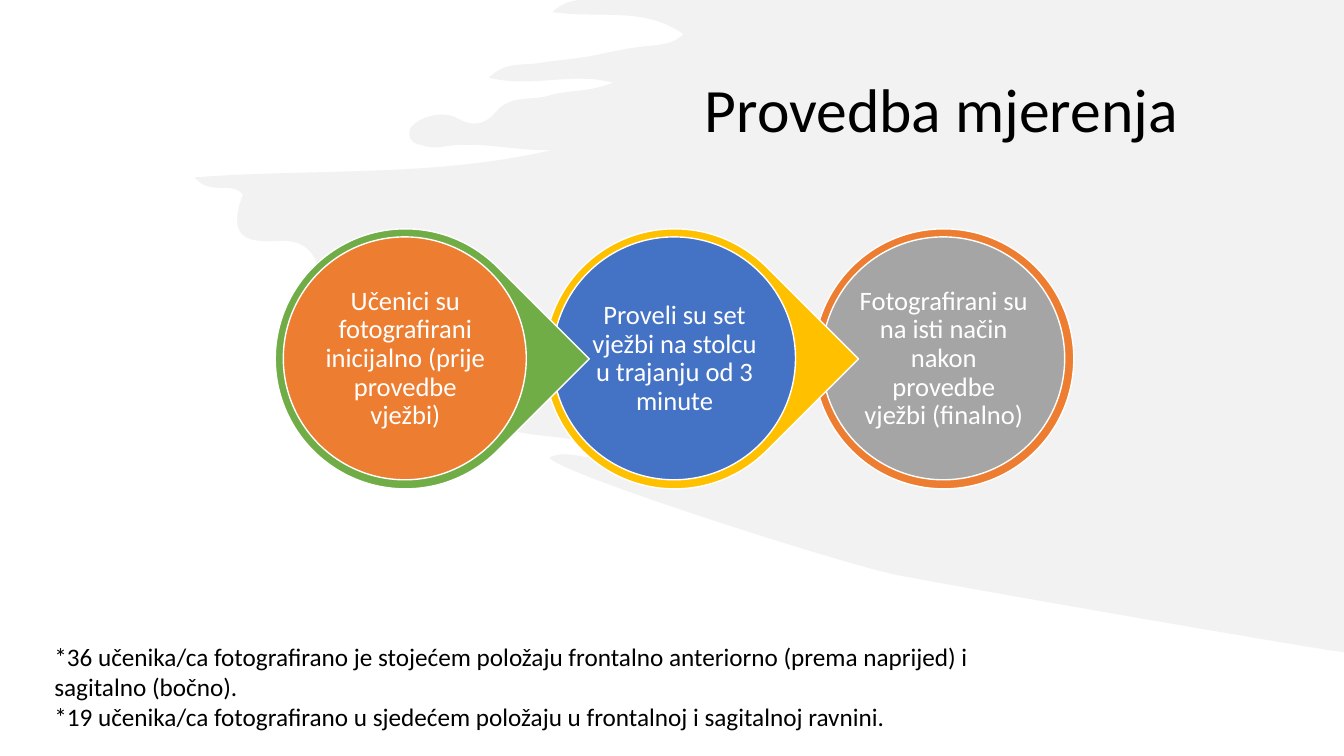
from lxml.etree import SubElement
from pptx import Presentation
from pptx.dml.color import RGBColor
from pptx.enum.shapes import MSO_SHAPE
from pptx.enum.text import MSO_ANCHOR, MSO_AUTO_SIZE, PP_ALIGN
from pptx.oxml.ns import qn
from pptx.util import Pt

PX = 9144  # EMU per px, 100 px to the inch
COLORS = {
    "black": "000000", "white": "FFFFFF", "brush": "E7E6E6",
    "green": "70AD47", "yellow": "FFC000", "orange": "ED7D31",
    "blue": "4472C4", "gray": "A5A5A5",
}


def add_disc(kind, left, top, size, color):
    disc = slide.shapes.add_shape(kind, left * PX, top * PX, size * PX, size * PX)
    disc.shadow.inherit = False
    disc.fill.solid()
    disc.fill.fore_color.rgb = RGBColor.from_string(COLORS[color])
    disc.line.color.rgb = RGBColor.from_string(COLORS["white"])
    disc.line.width = Pt(1)
    return disc


def write(frame, text, size, color, align=PP_ALIGN.LEFT, spacing=0.9):
    frame.text = text
    frame.word_wrap = True
    frame.auto_size = MSO_AUTO_SIZE.NONE
    for paragraph in frame.paragraphs:
        paragraph.alignment = align
        paragraph.line_spacing = spacing
        for run in paragraph.runs:
            run.font.size = Pt(size)
            run.font.name = "Calibri"
            run.font.color.rgb = RGBColor.from_string(COLORS[color])


presentation = Presentation()
presentation.slide_width = 1333 * PX
presentation.slide_height = 750 * PX
slide = presentation.slides.add_slide(presentation.slide_layouts[5])

# Brush stroke background: Bézier segments as two control points and an end
brush_curves = [
    (567, 1, 557, 3, 548, 12), (595, 19, 639, 6, 678, 34),
    (664, 47, 648, 44, 632, 47), (616, 49, 600, 53, 584, 56),
    (567, 59, 549, 60, 532, 63), (518, 65, 502, 61, 485, 77),
    (527, 88, 566, 71, 608, 82), (584, 92, 563, 89, 544, 95),
    (527, 100, 506, 94, 492, 111), (481, 124, 469, 126, 455, 118),
    (442, 111, 428, 113, 415, 120), (411, 123, 406, 126, 406, 132),
    (406, 141, 412, 143, 418, 144), (424, 146, 431, 147, 437, 146),
    (474, 139, 510, 150, 547, 149), (431, 176, 314, 167, 193, 176),
    (209, 195, 229, 179, 241, 193), (230, 222, 234, 237, 258, 239),
    (280, 241, 304, 231, 316, 265), (320, 276, 341, 273, 355, 275),
    (384, 279, 414, 275, 442, 288), (453, 293, 460, 297, 455, 311),
    (449, 325, 456, 330, 466, 336), (473, 340, 483, 339, 489, 352),
    (428, 350, 369, 340, 309, 350), (375, 374, 447, 373, 512, 402),
    (510, 412, 495, 407, 494, 422), (528, 438, 569, 427, 605, 450),
    (584, 461, 565, 444, 545, 454), (552, 469, 840, 561, 892, 571),
    (978, 587, 1195, 625, 1318, 645),
]
curve_points = [curve[i:i + 2] for curve in brush_curves for i in (0, 2, 4)]
builder = slide.shapes.build_freeform(1333, 0, scale=PX)
builder.add_line_segments([(575, 0), *curve_points, (1333, 647)], close=True)
brush = builder.convert_to_shape()
brush.shadow.inherit = False
brush.line.fill.background()
brush.fill.solid()
brush.fill.fore_color.rgb = RGBColor.from_string(COLORS["brush"])
brush_color = next(brush._element.spPr.iter(qn("a:srgbClr")))
SubElement(brush_color, qn("a:alpha"), val="50000")

# Join each three points between the straight edges into one curve
segments = list(brush._element.spPr.iter(qn("a:lnTo")))[1:-1]
for first, second, end in zip(segments[::3], segments[1::3], segments[2::3]):
    first.tag = qn("a:cubicBezTo")
    for segment in (second, end):
        first.append(segment[0])
        segment.getparent().remove(segment)

# Title, moved above the brush stroke
title = slide.shapes.title
title.left, title.top, title.width, title.height = 689 * PX, 8 * PX, 586 * PX, 207 * PX
write(title.text_frame, "Provedba mjerenja", 44, "black")
title.text_frame.vertical_anchor = MSO_ANCHOR.MIDDLE
slide.shapes._spTree.append(title._element)

# Measurement steps: the last lies at the back, each pointer overlaps the next
steps = [
    ("Učenici su fotografirani inicijalno (prije provedbe vježbi)",
     MSO_SHAPE.TEAR, "green", "orange"),
    ("Proveli su set vježbi na stolcu u trajanju od 3 minute",
     MSO_SHAPE.TEAR, "yellow", "blue"),
    ("Fotografirani su na isti način nakon provedbe vježbi (finalno)",
     MSO_SHAPE.OVAL, "orange", "gray"),
]
for index, (text, ring_kind, ring_color, disc_color) in reversed(list(enumerate(steps))):
    left, top = 273 + 267 * index, 227
    ring = add_disc(ring_kind, left, top, 258, ring_color)
    if ring_kind == MSO_SHAPE.TEAR:
        ring.rotation = 45
    add_disc(MSO_SHAPE.OVAL, left + 8, top + 8, 241, disc_color)
    label = slide.shapes.add_textbox((left + 43) * PX, (top + 43) * PX, 172 * PX, 172 * PX)
    frame = label.text_frame
    write(frame, text, 19, "white", PP_ALIGN.CENTER)
    frame.vertical_anchor = MSO_ANCHOR.MIDDLE
    frame.margin_left = frame.margin_right = 2 * PX
    frame.margin_top = frame.margin_bottom = 2 * PX

# Footnotes
footnotes = slide.shapes.add_textbox(44 * PX, 631 * PX, 975 * PX, 162 * PX)
write(
    footnotes.text_frame,
    "*36 učenika/ca fotografirano je stojećem položaju frontalno anteriorno "
    "(prema naprijed) i sagitalno (bočno).\v"
    "*19 učenika/ca fotografirano u sjedećem položaju u frontalnoj i sagitalnoj ravnini.",
    18, "black", spacing=1.0,
)

presentation.save("out.pptx")
